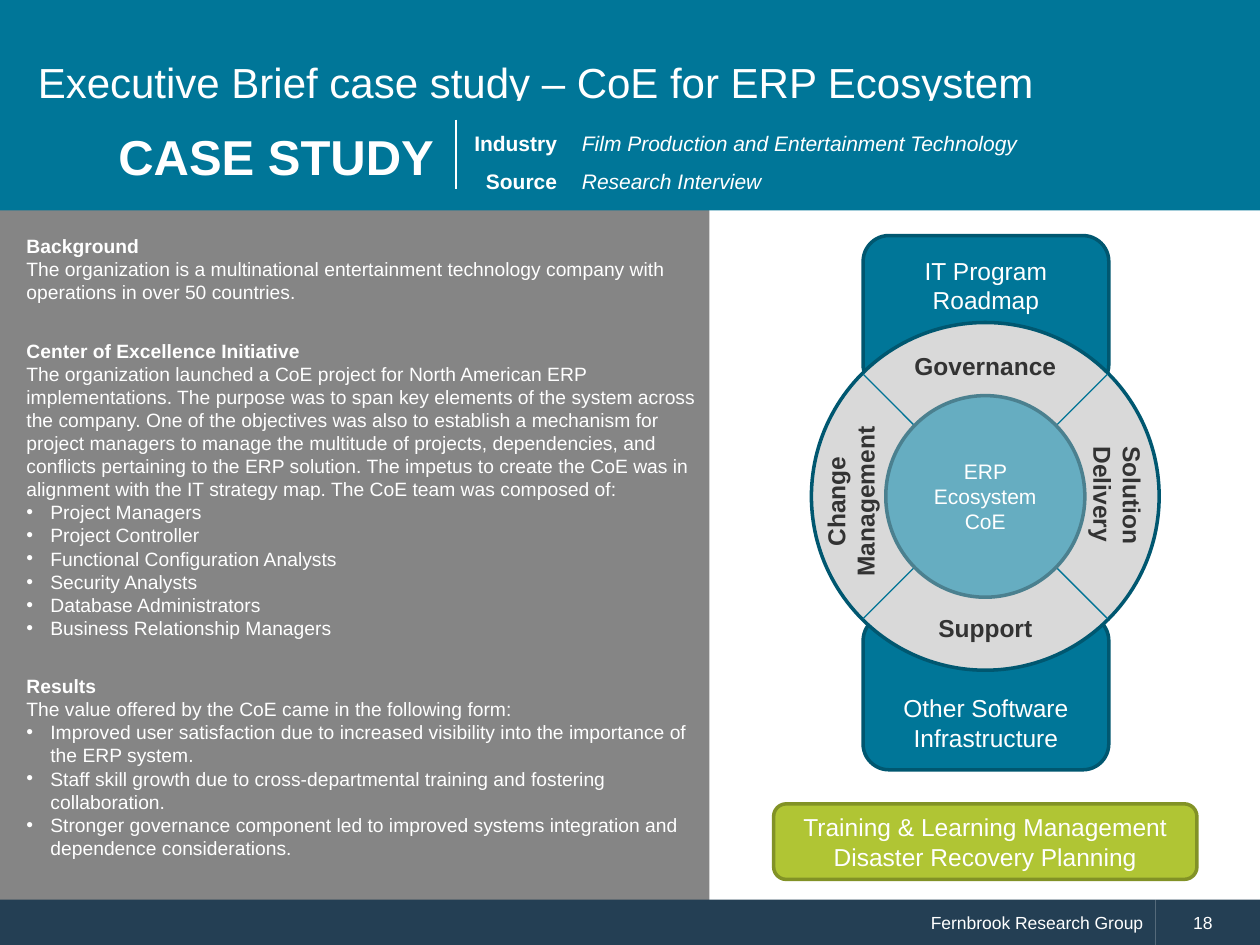
from lxml import etree
from pptx import Presentation
from pptx.dml.color import RGBColor
from pptx.enum.shapes import MSO_CONNECTOR, MSO_SHAPE
from pptx.enum.text import MSO_ANCHOR, MSO_AUTO_SIZE, PP_ALIGN
from pptx.oxml.ns import qn
from pptx.util import Inches, Pt

TEAL, DEEP_TEAL, NAVY, GREY = "007698", "005770", "243F54", "858585"
WHITE, CHARCOAL = "FFFFFF", "333333"

SECTIONS = [
    ("Background",
     "The organization is a multinational entertainment technology company with "
     "operations in over 50 countries.", []),
    ("Center of Excellence Initiative",
     "The organization launched a CoE project for North American ERP implementations. "
     "The purpose was to span key elements of the system across the company. One of the "
     "objectives was also to establish a mechanism for project managers to manage the "
     "multitude of projects, dependencies, and conflicts pertaining to the ERP solution. "
     "The impetus to create the CoE was in alignment with the IT strategy map. The CoE "
     "team was composed of:",
     ["Project Managers", "Project Controller", "Functional Configuration Analysts",
      "Security Analysts", "Database Administrators", "Business Relationship Managers"]),
    ("Results",
     "The value offered by the CoE came in the following form:",
     ["Improved user satisfaction due to increased visibility into the importance of "
      "the ERP system.",
      "Staff skill growth due to cross-departmental training and fostering collaboration.",
      "Stronger governance component led to improved systems integration and dependence "
      "considerations."]),
]


def paint(color_format, color):
    """Apply a hex colour to a fill or line."""
    color_format.solid()
    color_format.fore_color.rgb = RGBColor.from_string(color)


def prepare(shape, anchor=MSO_ANCHOR.TOP, insets=(0.1, 0.05, 0.1, 0.05), wrap=True):
    """Set the layout of a shape's text frame and return the frame."""
    frame = shape.text_frame
    frame.auto_size = MSO_AUTO_SIZE.NONE
    frame.word_wrap = wrap
    frame.vertical_anchor = anchor
    frame.margin_left, frame.margin_top, frame.margin_right, frame.margin_bottom = (
        Inches(inset) for inset in insets)
    return frame


def write(frame, text, size=11, color=WHITE, bold=False, italic=False,
          align=PP_ALIGN.LEFT, before=0, spacing=1.0, bullet=False):
    """Add one formatted paragraph, using the empty first one if there is one."""
    first = frame.paragraphs[0]
    paragraph = frame.add_paragraph() if first.runs else first
    properties = paragraph._p.get_or_add_pPr()
    indent = Inches(0.19) if bullet else 0
    properties.set("marL", str(indent))
    properties.set("indent", str(-indent))
    if bullet:
        etree.SubElement(properties, qn("a:buChar")).set("char", "•")
    else:
        etree.SubElement(properties, qn("a:buNone"))
    paragraph.alignment = align
    paragraph.space_before = Pt(before)
    paragraph.line_spacing = spacing
    run = paragraph.add_run()
    run.text = text
    font = run.font
    font.name, font.size, font.bold, font.italic = "Arial", Pt(size), bold, italic
    font.color.rgb = RGBColor.from_string(color)


def place(shape, box):
    """Move a shape to a box given in inches."""
    shape.left, shape.top, shape.width, shape.height = (Inches(side) for side in box)


def add_block(slide, preset, box, fill, outline=None):
    """Add a flat filled shape with an optional outline."""
    block = slide.shapes.add_shape(preset, *(Inches(side) for side in box))
    block.shadow.inherit = False
    paint(block.fill, fill)
    if outline:
        paint(block.line.fill, outline)
        block.line.width = Pt(2)
    else:
        block.line.fill.background()
    return block


def add_label(slide, box, **layout):
    """Add a text box and return its frame."""
    label = slide.shapes.add_textbox(*(Inches(side) for side in box))
    return prepare(label, **layout)


def add_rule(slide, start, end, color):
    """Add a thin straight line between two points."""
    rule = slide.shapes.add_connector(
        MSO_CONNECTOR.STRAIGHT, *(Inches(value) for value in (*start, *end)))
    paint(rule.line.fill, color)
    rule.line.width = Pt(0.75)
    etree.SubElement(rule._element.spPr, qn("a:effectLst"))


def fill_title(slide, box):
    """Place the slide title on its teal bar."""
    title = slide.shapes.title
    place(title, box)
    paint(title.fill, TEAL)
    write(prepare(title, MSO_ANCHOR.MIDDLE, (0.3, 0.1, 0.3, 0.1)),
          "Executive Brief case study – CoE for ERP Ecosystem", size=24)


def fill_story(slide, box):
    """Place the case narrative on its grey panel."""
    story = slide.placeholders[1]
    place(story, box)
    paint(story.fill, GREY)
    frame = prepare(story, insets=(0.21, 0.22, 0.09, 0.05))
    for number, (heading, summary, points) in enumerate(SECTIONS):
        write(frame, heading, bold=True, before=20 if number else 0)
        write(frame, summary)
        for point in points:
            write(frame, point, bullet=True)


def add_case_band(slide, box):
    """Add the case study band with its industry and source."""
    left, top, width, height = box
    band = add_block(slide, MSO_SHAPE.RECTANGLE, box, TEAL)
    write(prepare(band, MSO_ANCHOR.MIDDLE, (0.94, 0.05, 0.1, 0.05)),
          "CASE STUDY", size=28, bold=True)
    names = add_label(slide, (left + 3.57, top + 0.09, 0.95, 0.7))
    values = add_label(slide, (left + 4.52, top + 0.09, 4.09, 0.7))
    for name, value in (("Industry", "Film Production and Entertainment Technology"),
                        ("Source", "Research Interview")):
        write(names, name, size=12, bold=True, align=PP_ALIGN.RIGHT, spacing=1.5)
        write(values, value, size=12, italic=True, spacing=1.5)
    add_rule(slide, (left + 3.62, top + 0.15), (left + 3.62, top + 0.7), WHITE)


def add_pillars(slide, box):
    """Add the roadmap and infrastructure blocks at the two ends of a box."""
    left, top, width, height = box
    block_height = 1.23
    for text, block_top, anchor in (
            ("Other Software Infrastructure", top + height - block_height, MSO_ANCHOR.BOTTOM),
            ("IT Program Roadmap", top, MSO_ANCHOR.TOP)):
        pillar = add_block(slide, MSO_SHAPE.ROUNDED_RECTANGLE,
                           (left, block_top, width, block_height), TEAL, DEEP_TEAL)
        write(prepare(pillar, anchor, (0.15, 0.1, 0.15, 0.08)), text, size=14,
              align=PP_ALIGN.CENTER)


def add_wheel(slide, box):
    """Add the ring of four functions around the centre of excellence."""
    left, top, width, height = box
    center_x, center_y = left + width / 2, top + height / 2
    add_block(slide, MSO_SHAPE.OVAL, box, "D9D9D9", DEEP_TEAL)
    reach = 0.97
    for slope in (1, -1):
        add_rule(slide, (center_x - reach, center_y - slope * reach),
                 (center_x + reach, center_y + slope * reach), "007395")
    hub = add_block(slide, MSO_SHAPE.OVAL, (center_x - 0.79, center_y - 0.8, 1.58, 1.6),
                    "66ADC1", "4B808F")
    write(prepare(hub, MSO_ANCHOR.MIDDLE), "ERP Ecosystem CoE", size=12,
          align=PP_ALIGN.CENTER)
    for text, shift_x, shift_y, label_width, label_height, turn, align in (
            ("Governance", 0, -1.03, 1.39, 0.34, 0, PP_ALIGN.CENTER),
            ("Solution Delivery", 1.05, 0.04, 1.07, 0.57, 90, PP_ALIGN.LEFT),
            ("Support", 0, 1.05, 0.95, 0.34, 0, PP_ALIGN.CENTER),
            ("Change Management", -1.07, 0.04, 1.48, 0.57, 270, PP_ALIGN.CENTER)):
        label = slide.shapes.add_textbox(
            Inches(center_x + shift_x - label_width / 2),
            Inches(center_y + shift_y - label_height / 2),
            Inches(label_width), Inches(label_height))
        label.rotation = turn
        write(prepare(label, wrap=turn != 0), text, size=14, color=CHARCOAL,
              bold=True, align=align)


def add_foundation(slide, box):
    """Add the green block of supporting practices."""
    foundation = add_block(slide, MSO_SHAPE.ROUNDED_RECTANGLE, box, "B0C534", "829226")
    frame = prepare(foundation, MSO_ANCHOR.MIDDLE)
    for practice in ("Training & Learning Management", "Disaster Recovery Planning"):
        write(frame, practice, size=14, align=PP_ALIGN.CENTER)


def add_footer(slide, box):
    """Add the footer bar with the publisher and page number."""
    left, top, width, height = box
    split = 9.17
    for text, start, end, inset, align in (
            ("Fernbrook Research Group", left, split, 0.1, PP_ALIGN.RIGHT),
            ("18", split, left + width, 0.3, PP_ALIGN.LEFT)):
        bar = add_block(slide, MSO_SHAPE.RECTANGLE, (start, top, end - start, height), NAVY)
        write(prepare(bar, MSO_ANCHOR.MIDDLE, (inset, 0.05, 0.1, 0.05)), text,
              size=10, align=align)


def main():
    """Build the case study slide."""
    deck = Presentation()
    deck.slide_width, deck.slide_height = Inches(10), Inches(7.5)
    slide = deck.slides.add_slide(deck.slide_layouts[1])
    fill_title(slide, (0, 0, 10, 1.3))
    fill_story(slide, (0, 1.64, 5.63, 5.51))
    add_footer(slide, (0, 7.14, 10, 0.36))
    add_pillars(slide, (6.85, 1.87, 1.95, 4.24))
    add_wheel(slide, (6.44, 2.56, 2.76, 2.76))
    add_case_band(slide, (0, 0.8, 10, 0.87))
    add_foundation(slide, (6.14, 6.38, 3.36, 0.6))
    deck.save("out.pptx")


if __name__ == "__main__":
    main()
